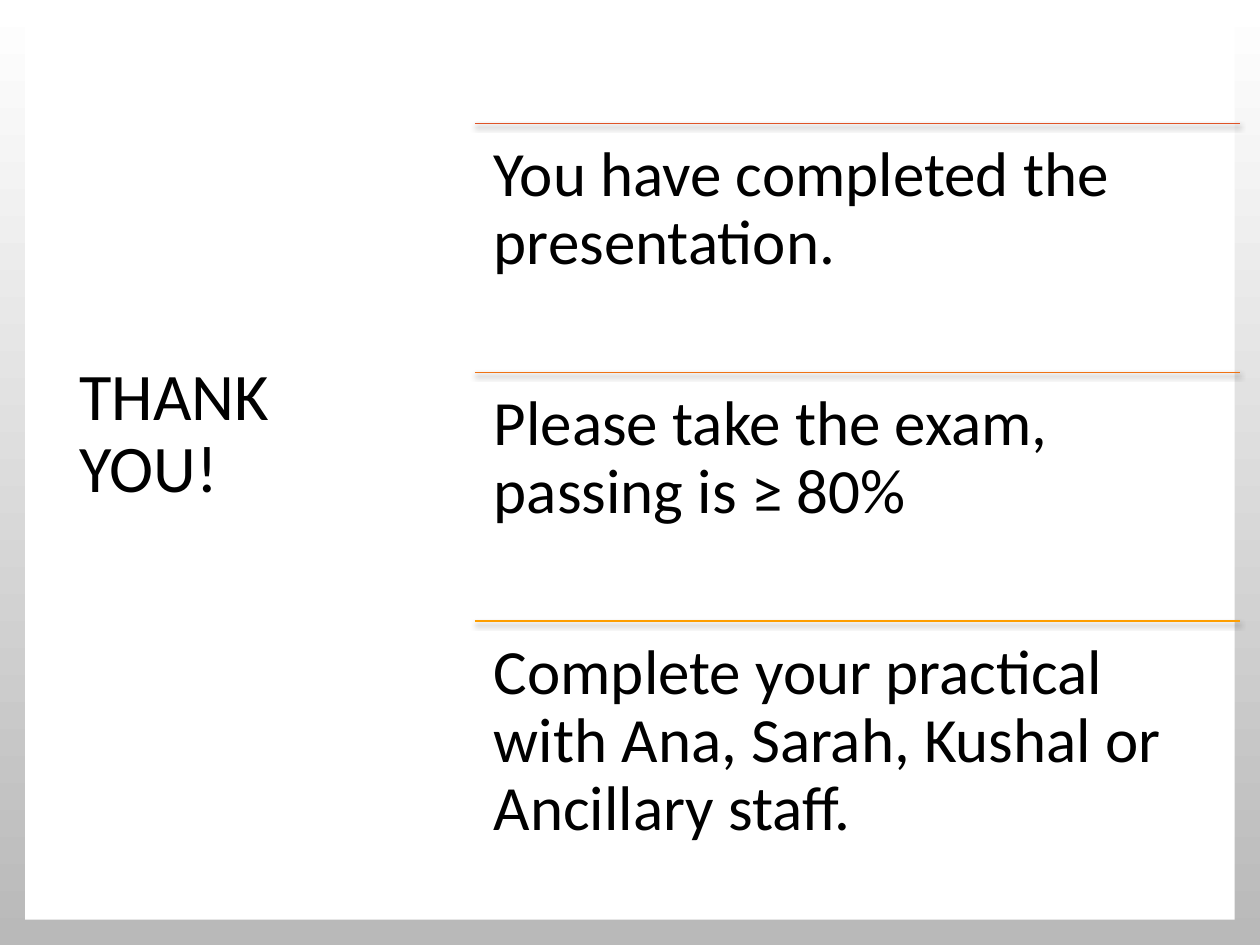
from lxml import etree
from pptx import Presentation
from pptx import util as u
from pptx.dml.color import RGBColor
from pptx.enum import shapes, text
from pptx.oxml import ns

WHITE = RGBColor(0xFF, 0xFF, 0xFF)
GREY = RGBColor(0xB9, 0xB9, 0xB9)
BLACK = RGBColor(0x00, 0x00, 0x00)
RED = RGBColor(0xDF, 0x53, 0x27)
ORANGE = RGBColor(0xEF, 0x72, 0x13)
AMBER = RGBColor(0xFE, 0x9E, 0x00)

STEPS = [
    (RED, "You have completed the presentation."),
    (ORANGE, "Please take the exam, passing is ≥ 80%"),
    (AMBER, "Complete your practical with Ana, Sarah, Kushal or Ancillary staff."),
]
LEFT, TOP, WIDTH, STEP = 3.77, 0.98, 6.07, 1.975


def write(frame, words, size, after, anchor, pad=None):
    frame.word_wrap = True
    frame.auto_size = text.MSO_AUTO_SIZE.NONE
    frame.vertical_anchor = anchor
    if pad is not None:
        frame.margin_left = frame.margin_right = u.Inches(pad)
        frame.margin_top = frame.margin_bottom = u.Inches(pad)
    para = frame.paragraphs[0]
    para.alignment = text.PP_ALIGN.LEFT
    para.line_spacing = 0.9
    para.space_before = u.Pt(0)
    para.space_after = u.Pt(after)
    run = para.add_run()
    run.text = words
    run.font.name = "Calibri"
    run.font.size = u.Pt(size)
    run.font.color.rgb = BLACK


class Deck:
    def __init__(self, slide):
        self.slide = slide
        self.items = slide.shapes

    def ground(self):
        fill = self.slide.background.fill
        fill.gradient()
        fill.gradient_angle = 270
        for stop, color in zip(fill.gradient_stops, (WHITE, GREY)):
            stop.color.rgb = color

    def panel(self, *box):
        card = self.items.add_shape(shapes.MSO_SHAPE.RECTANGLE, *map(u.Inches, box))
        card.shadow.inherit = False
        card.fill.solid()
        card.fill.fore_color.rgb = WHITE
        card.line.fill.background()
        self.items._spTree.remove(card._element)
        self.items._spTree.insert(2, card._element)

    def title(self, words, *box):
        head = self.items.title
        head.left, head.top, head.width, head.height = map(u.Inches, box)
        write(head.text_frame, words, 38, 6, text.MSO_ANCHOR.MIDDLE)

    def rule(self, x, y, width, color):
        line = self.items.add_connector(
            shapes.MSO_CONNECTOR.STRAIGHT, *map(u.Inches, (x, y, x + width, y)))
        line.line.color.rgb = color
        line.line.width = u.Pt(0.79)
        effects = etree.SubElement(line._element.spPr, ns.qn("a:effectLst"))
        shade = etree.SubElement(
            effects, ns.qn("a:outerShdw"), blurRad=str(u.Pt(3)),
            dist=str(u.Pt(2)), dir="5400000", rotWithShape="0")
        tint = etree.SubElement(shade, ns.qn("a:srgbClr"), val=str(BLACK))
        etree.SubElement(tint, ns.qn("a:alpha"), val="45000")

    def note(self, words, *box):
        area = self.items.add_textbox(*map(u.Inches, box))
        write(area.text_frame, words, 36, 12.6, text.MSO_ANCHOR.TOP, pad=0.15)


def main():
    show = Presentation()
    show.slide_width, show.slide_height = u.Inches(10), u.Inches(7.5)
    deck = Deck(show.slides.add_slide(show.slide_layouts[5]))
    deck.ground()
    deck.panel(0.2, 0.2, 9.6, 7.1)
    deck.title("THANK YOU!", 0.53, 1.44, 2.33, 4.02)
    for i, (color, words) in enumerate(STEPS):
        y = TOP + i * STEP
        deck.rule(LEFT, y, WIDTH, color)
        deck.note(words, LEFT, y, WIDTH, STEP)
    show.save("out.pptx")


if __name__ == "__main__":
    main()
